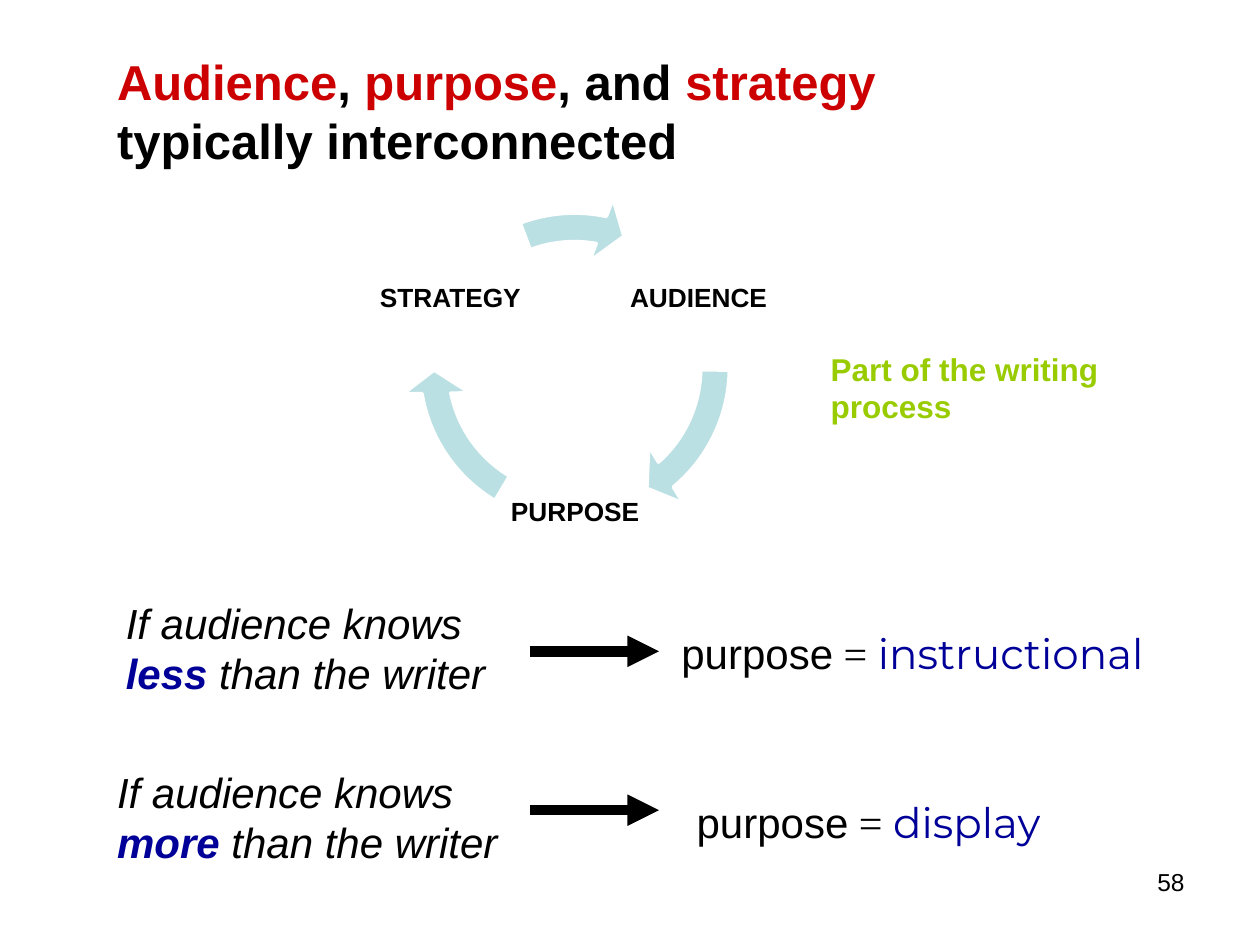
"""Build the slide on how audience, purpose and strategy interconnect."""
from lxml.etree import SubElement
from pptx import Presentation
from pptx.dml.color import RGBColor
from pptx.enum.shapes import MSO_CONNECTOR, MSO_SHAPE
from pptx.enum.text import MSO_ANCHOR, PP_ALIGN
from pptx.oxml.ns import qn
from pptx.util import Pt

BLACK = RGBColor(0x00, 0x00, 0x00)
WHITE = RGBColor(0xFF, 0xFF, 0xFF)
RED = RGBColor(0xCC, 0x00, 0x00)
NAVY = RGBColor(0x00, 0x00, 0x99)
GREEN = RGBColor(0x99, 0xCC, 0x00)
PALE_TEAL = RGBColor(0xBB, 0xE0, 0xE3)

TITLE = [
    ("Audience", {"color": RED}), (", ", {}), ("purpose", {"color": RED}),
    (", and ", {}), ("strategy", {"color": RED}), (" typically interconnected", {}),
]
CYCLE_LABELS = [("AUDIENCE", 357.1, 127.4), ("PURPOSE", 286.6, 249.8), ("STRATEGY", 215.3, 127.4)]
CYCLE_ARROW_ANGLES = [(0.85, 49.42), (120.98, 169.55), (249.44, 280.96)]
CYCLE_BOX = (229, 110.9, 198.7, 198.7)
LABEL_SIZE = 84.2
RULES = [
    {"amount": "less", "purpose": "instructional", "condition_box": (64.8, 337.7, 232.6, 64.8),
     "purpose_box": (382.3, 355, 329, 36), "arrow_y": 372.2},
    {"amount": "more", "purpose": "display", "condition_box": (59.8, 434.2, 238.3, 64.8),
     "purpose_box": (391, 451.4, 329, 36), "arrow_y": 463},
]
ARROW_START, ARROW_END = 303.1, 376.6


def add_text(slide, runs, box, size, color=BLACK, font="Arial", bold=False, italic=False,
             align=PP_ALIGN.LEFT, anchor=MSO_ANCHOR.TOP, inset=None):
    """Add a text box from (text, overrides) pairs."""
    shape = slide.shapes.add_textbox(*map(Pt, box))
    frame = shape.text_frame
    frame.word_wrap = True
    frame.vertical_anchor = anchor
    if inset is not None:
        frame.margin_left = frame.margin_right = Pt(inset)
        frame.margin_top = frame.margin_bottom = Pt(inset)
    paragraph = frame.paragraphs[0]
    paragraph.alignment = align
    for text, overrides in runs:
        run = paragraph.add_run()
        run.text = text
        run.font.size = Pt(size)
        run.font.name = overrides.get("font", font)
        run.font.bold = overrides.get("bold", bold)
        run.font.italic = italic
        run.font.color.rgb = overrides.get("color", color)


def add_arrow(slide, y):
    """Add a thick horizontal arrow."""
    arrow = slide.shapes.add_connector(
        MSO_CONNECTOR.STRAIGHT, Pt(ARROW_START), Pt(y), Pt(ARROW_END), Pt(y))
    arrow.line.color.rgb = BLACK
    arrow.line.width = Pt(6)
    SubElement(arrow.line._get_or_add_ln(), qn("a:tailEnd"), type="triangle")
    SubElement(arrow._element.spPr, qn("a:effectLst"))


def add_cycle_arrow(slide, start, end):
    """Add a circular arrow between two angles in degrees."""
    shape = slide.shapes.add_shape(MSO_SHAPE.CIRCULAR_ARROW, *map(Pt, CYCLE_BOX))
    degree = 0.6
    values = (0.082, 9.6 * degree, end * degree, start * degree, 0.096)
    for index, value in enumerate(values):
        shape.adjustments[index] = value
    shape.shadow.inherit = False
    shape.fill.solid()
    shape.fill.fore_color.rgb = PALE_TEAL
    shape.line.color.rgb = WHITE
    shape.line.width = Pt(2)


def main():
    """Create and save the presentation."""
    presentation = Presentation()
    presentation.slide_width, presentation.slide_height = Pt(720), Pt(540)
    slide = presentation.slides.add_slide(presentation.slide_layouts[6])

    add_text(slide, [("58", {})], (516.2, 491.8, 167.8, 37.4), 14, align=PP_ALIGN.RIGHT)
    add_text(slide, TITLE, (59.8, 25.9, 552.2, 74.2), 28, bold=True)

    for rule in RULES:
        condition = [("If audience knows ", {}), (rule["amount"], {"color": NAVY, "bold": True}),
                     (" than the writer", {})]
        outcome = [("purpose", {}), (" = ", {"font": "Times New Roman"}),
                   (rule["purpose"], {"font": "Montserrat", "color": NAVY})]
        add_text(slide, condition, rule["condition_box"], 24, italic=True)
        add_arrow(slide, rule["arrow_y"])
        add_text(slide, outcome, rule["purpose_box"], 24)

    for (label, left, top), (start, end) in zip(CYCLE_LABELS, CYCLE_ARROW_ANGLES):
        add_text(slide, [(label, {})], (left, top, LABEL_SIZE, LABEL_SIZE), 15, bold=True,
                 align=PP_ALIGN.CENTER, anchor=MSO_ANCHOR.MIDDLE, inset=1.5)
        add_cycle_arrow(slide, start, end)

    add_text(slide, [("Part of the writing process", {})], (467.6, 196.2, 215.3, 57.6), 18,
             color=GREEN, bold=True)
    presentation.save("out.pptx")


if __name__ == "__main__":
    main()
